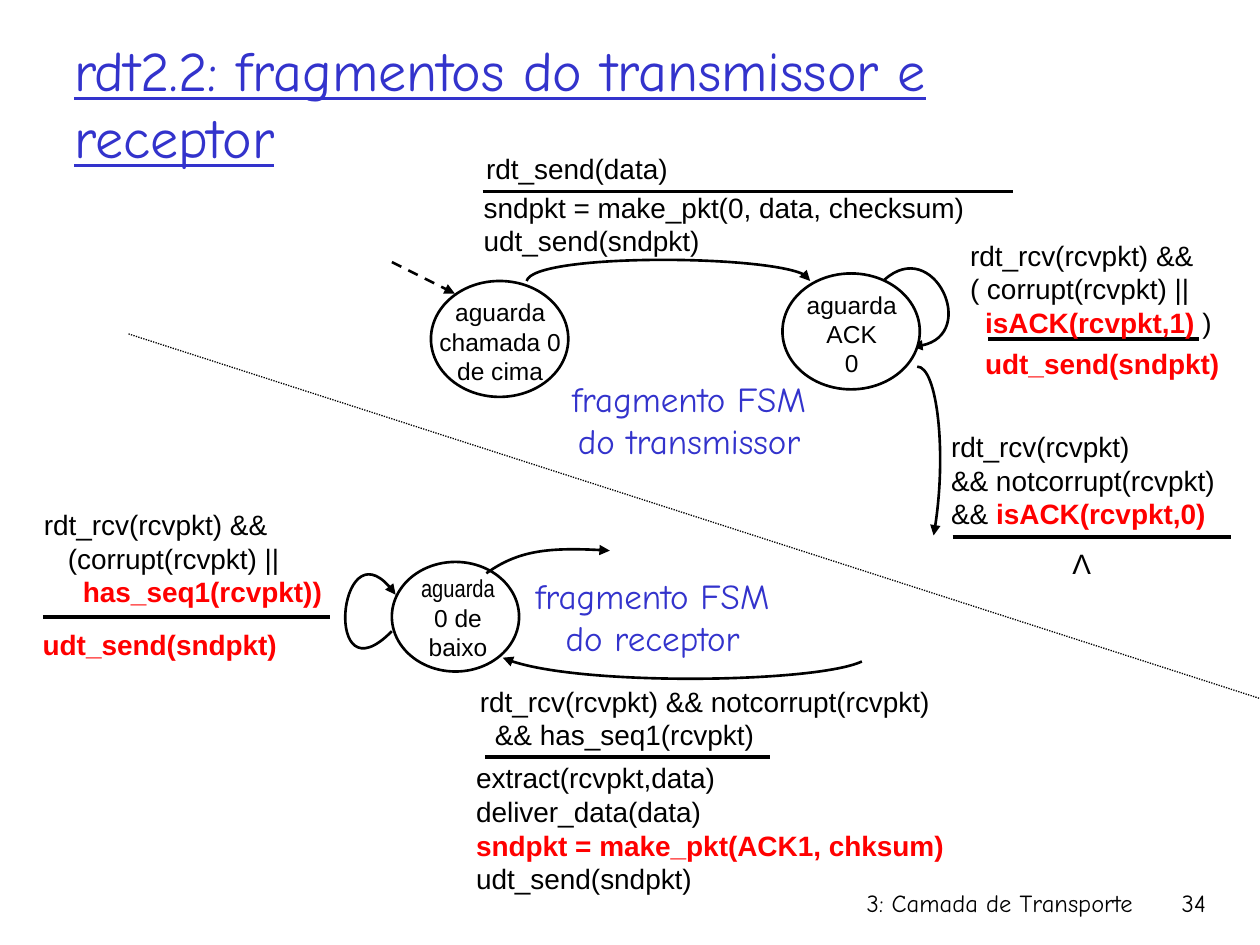
from dataclasses import dataclass
from typing import NamedTuple

from lxml.etree import SubElement
from pptx import Presentation
from pptx.dml.color import RGBColor
from pptx.enum.dml import MSO_LINE_DASH_STYLE as Dash
from pptx.enum.shapes import MSO_CONNECTOR as Connector, MSO_SHAPE as Preset
from pptx.enum.text import MSO_ANCHOR as Anchor, MSO_AUTO_SIZE as AutoSize, PP_ALIGN as Align
from pptx.oxml.ns import qn
from pptx.util import Inches, Pt


@dataclass(frozen=True)
class Theme:
    black: RGBColor = RGBColor(0, 0, 0)
    white: RGBColor = RGBColor(255, 255, 255)
    blue: RGBColor = RGBColor(0x33, 0x33, 0xCC)
    red: RGBColor = RGBColor(255, 0, 0)
    body_font: str = "Arial"
    narrow_font: str = "Arial Narrow"
    title_font: str = "Comic Neue"
    title_size: int = 32
    caption_size: int = 20
    event_size: int = 16
    state_size: int = 14
    thin: float = 0.75
    curve: float = 1.5
    rule: float = 2.25


THEME = Theme()


class Run(NamedTuple):
    text: str
    size: int = THEME.event_size
    color: RGBColor = THEME.black
    font: str = THEME.body_font
    bold: bool = False
    underline: bool = False


class Line(NamedTuple):
    runs: list[Run]
    indent: float = 0


class Label(NamedTuple):
    left: float
    top: float
    width: float
    height: float
    lines: list[Line]
    align: Align = Align.LEFT
    wrap: bool = True


class State(NamedTuple):
    left: float
    top: float
    width: float
    height: float
    label: Label


class Curve(NamedTuple):
    points: list[tuple[float, float]]  # start, two control points, end
    arrow: str = "tailEnd"


class Segment(NamedTuple):
    start: tuple[float, float]
    end: tuple[float, float]
    weight: float = THEME.rule
    dash: Dash | None = None
    arrow: str | None = None


def plain(text: str, indent: float = 0) -> Line:
    return Line([Run(text)], indent)


def key(text: str) -> Run:
    return Run(text, color=THEME.red, bold=True)


def state_line(text: str, font: str = THEME.body_font) -> Line:
    return Line([Run(text, THEME.state_size, font=font)])


def caption(left: float, top: float, owner: str) -> Label:
    lines = [Line([Run(text, THEME.caption_size, THEME.blue, THEME.title_font)])
             for text in ("fragmento FSM", owner)]
    return Label(left, top, 2.06, 0.77, lines, Align.CENTER, False)


def footer(left: float, width: float, text: str) -> Label:
    run = Run(text, THEME.state_size, font=THEME.title_font)
    return Label(left, 7, width, 0.5, [Line([run])], Align.RIGHT)


def add_run(paragraph, item: Run) -> None:
    run = paragraph.add_run()
    run.text = item.text
    font = run.font
    font.name, font.size, font.bold = item.font, Pt(item.size), item.bold
    font.underline = item.underline
    font.color.rgb = item.color


def add_label(slide, label: Label) -> None:
    box = slide.shapes.add_textbox(*map(Inches, label[:4]))
    frame = box.text_frame
    frame.word_wrap = label.wrap
    for index, line in enumerate(label.lines):
        paragraph = frame.add_paragraph() if index else frame.paragraphs[0]
        paragraph.alignment = label.align
        if line.indent:
            paragraph._p.get_or_add_pPr().set("marL", str(Inches(line.indent)))
        for run in line.runs:
            add_run(paragraph, run)


def style_line(shape, weight: float, arrow: str | None = None) -> None:
    shape.line.color.rgb = THEME.black
    shape.line.width = Pt(weight)
    if arrow:
        SubElement(shape.line._get_or_add_ln(), qn(f"a:{arrow}"), type="triangle")


def add_state(slide, state: State) -> None:
    oval = slide.shapes.add_shape(Preset.OVAL, *map(Inches, state[:4]))
    oval.shadow.inherit = False
    oval.fill.solid()
    oval.fill.fore_color.rgb = THEME.white
    style_line(oval, THEME.curve)
    add_label(slide, state.label)


def add_curve(slide, curve: Curve) -> None:
    start, *others = [(Inches(x), Inches(y)) for x, y in curve.points]
    builder = slide.shapes.build_freeform(*start)
    builder.add_line_segments(others, close=False)
    shape = builder.convert_to_shape()
    shape.shadow.inherit = False
    shape.fill.background()
    # Join the three straight steps into one cubic Bézier
    outline = shape._element.find(f".//{qn('a:path')}")
    bezier = SubElement(outline, qn("a:cubicBezTo"))
    for step in outline.findall(qn("a:lnTo")):
        bezier.append(step[0])
        outline.remove(step)
    style_line(shape, THEME.curve, curve.arrow)


def add_segment(slide, segment: Segment) -> None:
    ends = map(Inches, (*segment.start, *segment.end))
    line = slide.shapes.add_connector(Connector.STRAIGHT, *ends)
    if segment.dash:
        line.line.dash_style = segment.dash
    style_line(line, segment.weight, segment.arrow)
    SubElement(line._element.spPr, qn("a:effectLst"))


SENDER_CURVES = [
    Curve([(4.18, 2.23), (4.23, 2.01), (6.43, 2.02), (6.43, 2.23)]),
    Curve([(7.02, 2.22), (7.41, 1.87), (7.81, 2.73), (7.24, 2.75)]),
    Curve([(7.41, 4.25), (7.52, 3.65), (7.44, 2.91), (7.28, 2.91)], "headEnd"),
]
RECEIVER_CURVES = [
    Curve([(3.86, 4.55), (4.11, 4.37), (4.38, 4.34), (4.84, 4.37)]),
    Curve([(3.99, 5.22), (4.49, 5.45), (6.48, 5.42), (6.84, 5.25)], "headEnd"),
    Curve([(3.11, 5.01), (2.56, 5.57), (2.69, 4.08), (3.14, 4.72)]),
]
STATES = [
    State(3.42, 2.23, 1.09, 0.92, Label(
        3.34, 2.31, 1.26, 0.67, [state_line("aguarda chamada 0 de cima")], Align.CENTER)),
    State(6.21, 2.17, 1.09, 0.92, Label(
        6.13, 2.25, 1.26, 0.67, [state_line("aguarda ACK"), state_line("0")], Align.CENTER)),
    State(3.11, 4.46, 1.01, 0.87, Label(
        3.16, 4.5, 0.95, 0.67,
        [state_line("aguarda", THEME.narrow_font), state_line("0 de baixo")], Align.CENTER)),
]
SEGMENTS = [
    Segment((3.83, 1.52), (8.04, 1.52)),
    Segment((7.84, 2.69), (9.52, 2.69)),
    Segment((7.56, 4.26), (9.77, 4.26)),
    Segment((3.85, 6.01), (6.11, 6.01)),
    Segment((0.34, 4.9), (2.62, 4.9)),
    Segment((3.11, 2.08), (3.61, 2.33), THEME.curve, Dash.DASH, "tailEnd"),
    Segment((1.02, 2.65), (10.36, 5.66), THEME.thin, Dash.ROUND_DOT),
]
LABELS = [
    # Sender events and actions
    Label(3.76, 1.15, 2.04, 0.31, [plain("rdt_send(data)")]),
    Label(3.74, 1.46, 4.41, 0.44,
          [plain("sndpkt = make_pkt(0, data, checksum)"), plain("udt_send(sndpkt)")]),
    Label(7.6, 1.84, 3.22, 0.62,
          [plain("rdt_rcv(rcvpkt) &&"), plain("( corrupt(rcvpkt) ||"),
           Line([key("isACK(rcvpkt,1)"), Run(" )")], 0.12)]),
    Label(7.72, 2.7, 2.52, 0.44, [Line([key("udt_send(sndpkt)")])]),
    Label(7.45, 3.36, 2.86, 0.62,
          [plain("rdt_rcv(rcvpkt)"), plain("&& notcorrupt(rcvpkt)"),
           Line([Run("&& "), key("isACK(rcvpkt,0)")])]),
    Label(8.36, 4.29, 0.45, 0.37, [plain("Λ")], Align.CENTER),
    # Receiver events and actions
    Label(0.25, 3.98, 2.8, 0.7,
          [plain("rdt_rcv(rcvpkt) &&"), plain("(corrupt(rcvpkt) ||", 0.19),
           Line([key("has_seq1(rcvpkt))")], 0.31)]),
    Label(0.24, 4.93, 2.41, 0.45, [Line([key("udt_send(sndpkt)")])]),
    Label(3.71, 5.38, 4.67, 0.62,
          [plain("rdt_rcv(rcvpkt) && notcorrupt(rcvpkt)"), plain("&& has_seq1(rcvpkt)", 0.12)]),
    Label(3.68, 5.99, 4.95, 0.76,
          [plain("extract(rcvpkt,data)"), plain("deliver_data(data)"),
           Line([key("sndpkt = make_pkt(ACK1, chksum)")]), plain("udt_send(sndpkt)")]),
    # Captions and footer
    caption(4.44, 2.95, "do transmissor"),
    caption(4.15, 4.51, "do receptor"),
    footer(5.92, 3.17, "3: Camada de Transporte"),
    footer(8.93, 0.74, "34"),
]


def add_title(slide, text: str) -> None:
    title = slide.shapes.title
    title.left, title.top, title.width, title.height = map(Inches, (0.49, 0.19, 8.5, 1.25))
    frame = title.text_frame
    frame.auto_size, frame.vertical_anchor = AutoSize.NONE, Anchor.MIDDLE
    frame.paragraphs[0].alignment = Align.LEFT
    add_run(frame.paragraphs[0],
            Run(text, THEME.title_size, THEME.blue, THEME.title_font, underline=True))


def main() -> None:
    presentation = Presentation()
    presentation.slide_width, presentation.slide_height = Inches(10), Inches(7.5)
    slide = presentation.slides.add_slide(presentation.slide_layouts[5])
    add_title(slide, "rdt2.2: fragmentos do transmissor e receptor")
    # Sender transitions pass behind the states, receiver ones in front
    for items, draw in ((SENDER_CURVES, add_curve), (STATES, add_state),
                        (RECEIVER_CURVES, add_curve), (SEGMENTS, add_segment),
                        (LABELS, add_label)):
        for item in items:
            draw(slide, item)
    presentation.save("out.pptx")


if __name__ == "__main__":
    main()
